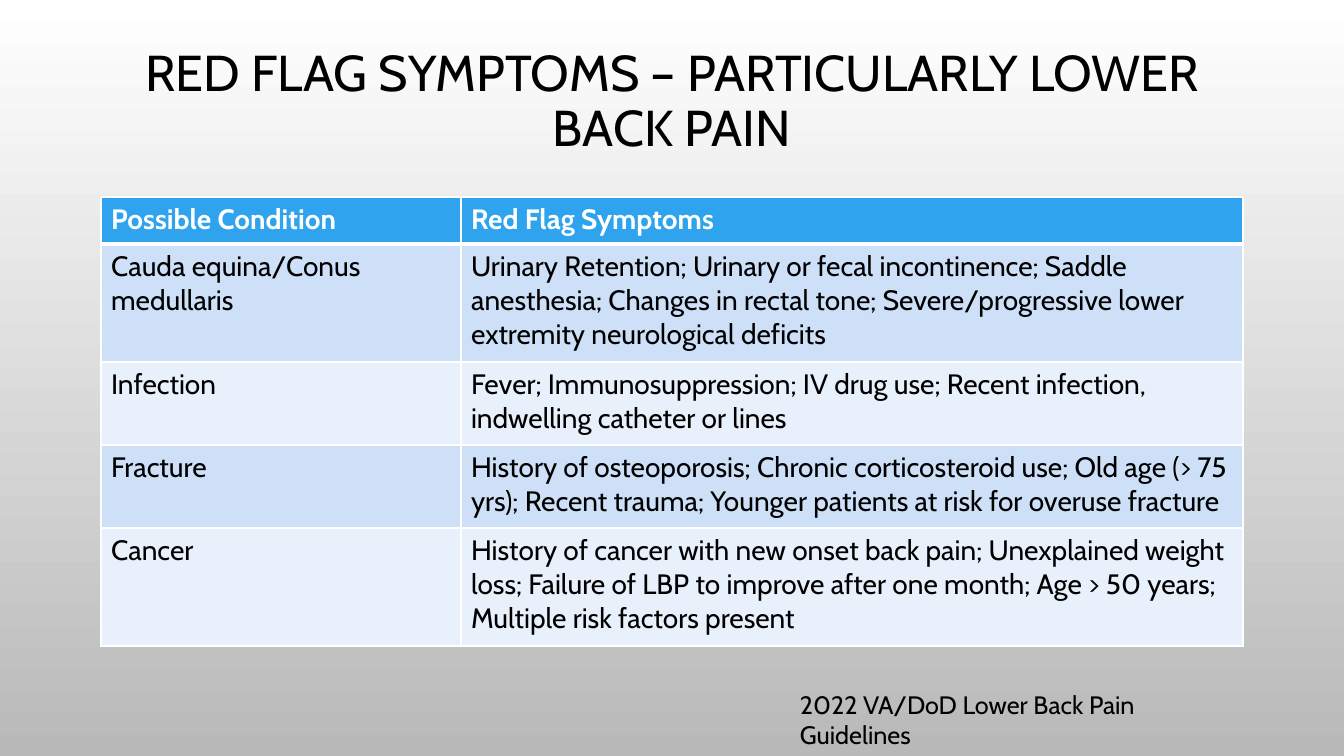
from dataclasses import dataclass

import lxml.etree
import pptx
import pptx.dml.color
import pptx.enum.text
import pptx.oxml.ns
import pptx.util

EMU_PER_PX = 914400 / 100.8
FONT = "Cabin"
BLACK = "000000"
WHITE = "FFFFFF"
HEADER_BLUE = "2FA3EE"
BAND_FILLS = ("CDE0F8", "E8F0FC")
COLUMN_WIDTHS = (360, 782)


@dataclass(frozen=True)
class SymptomRow:
    condition: str
    symptoms: str
    height: int


ROWS = (
    SymptomRow("Possible Condition", "Red Flag Symptoms", 47),
    SymptomRow(
        "Cauda equina/Conus medullaris",
        "Urinary Retention; Urinary or fecal incontinence; Saddle anesthesia; "
        "Changes in rectal tone; Severe/progressive lower extremity neurological deficits",
        118,
    ),
    SymptomRow(
        "Infection",
        "Fever; Immunosuppression; IV drug use; Recent infection, indwelling catheter or lines",
        83,
    ),
    SymptomRow(
        "Fracture",
        "History of osteoporosis; Chronic corticosteroid use; Old age (> 75 yrs); "
        "Recent trauma; Younger patients at risk for overuse fracture",
        83,
    ),
    SymptomRow(
        "Cancer",
        "History of cancer with new onset back pain; Unexplained weight loss; Failure of LBP "
        "to improve after one month; Age > 50 years; Multiple risk factors present",
        118,
    ),
)


def px(length: int) -> pptx.util.Emu:
    return pptx.util.Emu(round(length * EMU_PER_PX))


def color(value: str) -> pptx.dml.color.RGBColor:
    return pptx.dml.color.RGBColor.from_string(value)


def write_text(text_frame, text: str, *, size: int, ink: str = BLACK, bold: bool = False,
               align=pptx.enum.text.PP_ALIGN.LEFT, line_spacing: float = 1.0) -> None:
    text_frame.word_wrap = True
    paragraph = text_frame.paragraphs[0]
    paragraph.alignment = align
    paragraph.line_spacing = line_spacing
    run = paragraph.add_run()
    run.text = text
    run.font.name = FONT
    run.font.size = pptx.util.Pt(size)
    run.font.bold = bold
    run.font.color.rgb = color(ink)


def add_text(slide, left: int, top: int, width: int, height: int, text: str, *,
             anchor=pptx.enum.text.MSO_ANCHOR.TOP, **text_format) -> None:
    shape = slide.shapes.add_textbox(px(left), px(top), px(width), px(height))
    shape.text_frame.vertical_anchor = anchor
    write_text(shape.text_frame, text, **text_format)


def set_borders(cell, top: int, bottom: int) -> None:
    properties = cell._tc.get_or_add_tcPr()
    qualified = pptx.oxml.ns.qn
    widths = {"a:lnL": 1, "a:lnR": 1, "a:lnT": top, "a:lnB": bottom}
    for index, (side, width) in enumerate(widths.items()):
        line = lxml.etree.Element(qualified(side), w=str(pptx.util.Pt(width)))
        fill = lxml.etree.SubElement(line, qualified("a:solidFill"))
        lxml.etree.SubElement(fill, qualified("a:srgbClr"), val=WHITE)
        properties.insert(index, line)


def add_symptom_table(slide, left: int, top: int) -> None:
    height = sum(row.height for row in ROWS)
    frame = slide.shapes.add_table(len(ROWS), len(COLUMN_WIDTHS), px(left), px(top),
                                   px(sum(COLUMN_WIDTHS)), px(height))
    table = frame.table
    for column, width in zip(table.columns, COLUMN_WIDTHS):
        column.width = px(width)
    for index, row in enumerate(ROWS):
        header = index == 0
        table.rows[index].height = px(row.height)
        for cell, text in zip(table.rows[index].cells, (row.condition, row.symptoms)):
            write_text(cell.text_frame, text, size=20, bold=header,
                       ink=WHITE if header else BLACK)
            cell.fill.solid()
            cell.fill.fore_color.rgb = color(
                HEADER_BLUE if header else BAND_FILLS[(index - 1) % 2])
            set_borders(cell, top=3 if index == 1 else 1, bottom=3 if header else 1)


def set_background(slide) -> None:
    fill = slide.background.fill
    fill.gradient()
    fill.gradient_angle = 270
    for stop, position, value in zip(fill.gradient_stops, (0, 1), (WHITE, "B9B9B9")):
        stop.position = position
        stop.color.rgb = color(value)


def main() -> None:
    presentation = pptx.Presentation()
    presentation.slide_width = px(1344)
    presentation.slide_height = px(756)
    slide = presentation.slides.add_slide(presentation.slide_layouts[6])
    set_background(slide)
    add_text(slide, 101, 31, 1142, 143,
             "RED FLAG SYMPTOMS – PARTICULARLY LOWER BACK PAIN", size=36,
             anchor=pptx.enum.text.MSO_ANCHOR.MIDDLE,
             align=pptx.enum.text.PP_ALIGN.CENTER, line_spacing=0.9)
    add_symptom_table(slide, 101, 197)
    add_text(slide, 790, 684, 453, 40, "2022 VA/DoD Lower Back Pain Guidelines", size=18)
    presentation.save("out.pptx")


if __name__ == "__main__":
    main()
